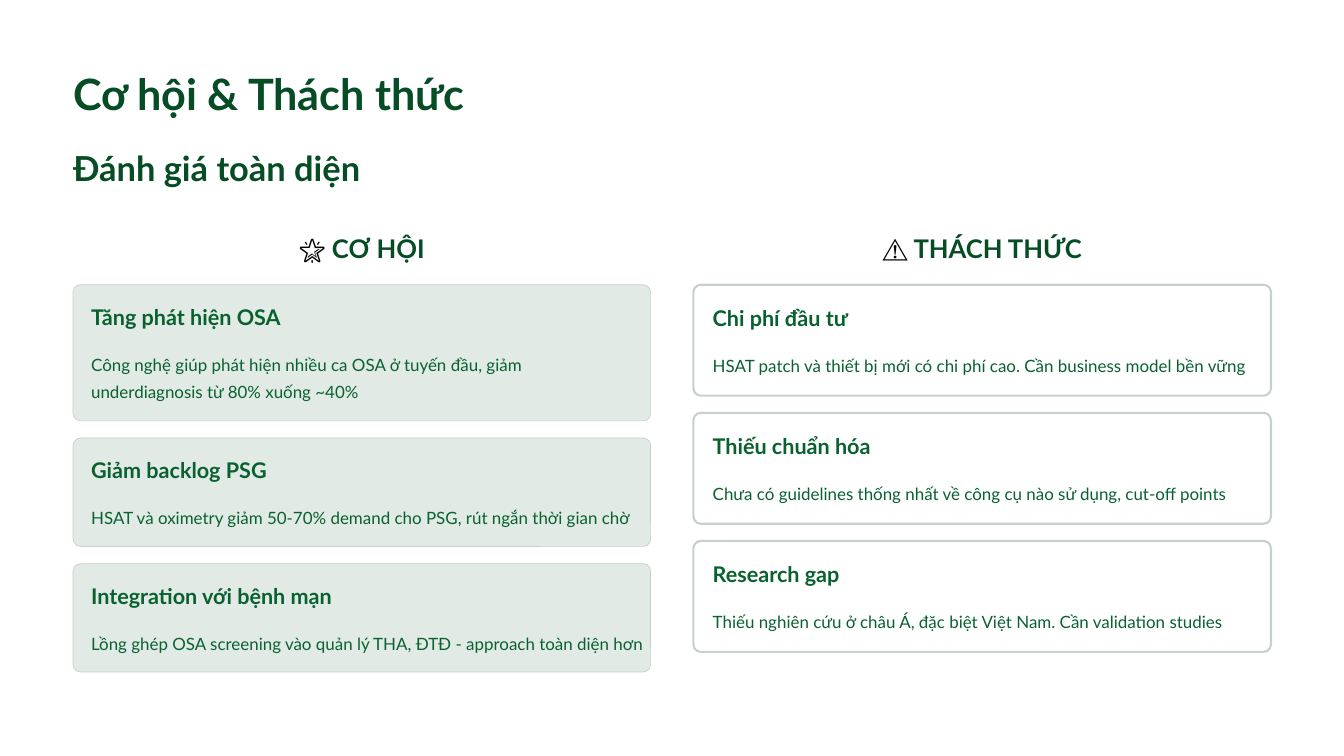
from dataclasses import dataclass

from pptx import Presentation
from pptx.dml.color import RGBColor
from pptx.enum.shapes import MSO_SHAPE
from pptx.enum.text import MSO_ANCHOR, PP_ALIGN
from pptx.slide import Slide
from pptx.util import Inches, Pt

ROUNDED = MSO_SHAPE.ROUNDED_RECTANGLE
TOP = MSO_ANCHOR.TOP
LEFT, CENTER = PP_ALIGN.LEFT, PP_ALIGN.CENTER

FONT = "Lato"
COLORS = {
    "background": "FFFFFF",
    "heading": "064D26",
    "card_text": "096130",
    "icon": "000000",
    "tint": "E1EAE5",
    "border": "C7D0CB",
}

GRID_COLUMNS, GRID_ROWS = 1600, 900
SLIDE_WIDTH, SLIDE_HEIGHT = Inches(16), Inches(9)
MARGIN = 87
GUTTER = 51
COLUMN_WIDTH = (GRID_COLUMNS - 2 * MARGIN - GUTTER) / 2
HEADING_ROW, HEADING_HEIGHT = 276, 39
CARDS_ROW, CARD_GAP, CARD_RADIUS = 339, 20.5, 8.7
TITLE_HEIGHT, TITLE_GAP, LINE_HEIGHT = 32, 21, 33


@dataclass(frozen=True)
class Card:
    title: str
    body: str
    lines: int = 1


@dataclass(frozen=True)
class Side:
    icon: str
    heading: str
    fill: str
    border_width: float
    inset: float
    cards: tuple[Card, ...]


SIDES = (
    Side("🌟", "CƠ HỘI", "tint", 0.6, 21.5, (
        Card("Tăng phát hiện OSA",
             "Công nghệ giúp phát hiện nhiều ca OSA ở tuyến đầu, giảm "
             "underdiagnosis từ 80% xuống ~40%", lines=2),
        Card("Giảm backlog PSG",
             "HSAT và oximetry giảm 50-70% demand cho PSG, rút ngắn thời gian chờ"),
        Card("Integration với bệnh mạn",
             "Lồng ghép OSA screening vào quản lý THA, ĐTĐ - approach toàn diện hơn"),
    )),
    Side("⚠️", "THÁCH THỨC", "background", 1.8, 23, (
        Card("Chi phí đầu tư",
             "HSAT patch và thiết bị mới có chi phí cao. Cần business model bền vững"),
        Card("Thiếu chuẩn hóa",
             "Chưa có guidelines thống nhất về công cụ nào sử dụng, cut-off points"),
        Card("Research gap",
             "Thiếu nghiên cứu ở châu Á, đặc biệt Việt Nam. Cần validation studies"),
    )),
)


def rgb(name: str) -> RGBColor:
    return RGBColor.from_string(COLORS[name])


def place(column: float, row: float, width: float, height: float) -> tuple[int, ...]:
    across, down = SLIDE_WIDTH / GRID_COLUMNS, SLIDE_HEIGHT / GRID_ROWS
    return (round(column * across), round(row * down),
            round(width * across), round(height * down))


def add_text(slide: Slide, text: str, area: tuple[int, ...], *, size: float,
             leading: float, color: str, bold: bool = False, icon: str = "",
             align: PP_ALIGN = LEFT, wrap: bool = False) -> None:
    frame = slide.shapes.add_textbox(*area).text_frame
    frame.margin_left = frame.margin_right = 0
    frame.margin_top = frame.margin_bottom = 0
    frame.word_wrap = wrap
    frame.vertical_anchor = TOP
    paragraph = frame.paragraphs[0]
    paragraph.alignment = align
    paragraph.line_spacing = Pt(leading)
    pieces = [(icon, "icon"), (f" {text}", color)] if icon else [(text, color)]
    for content, shade in pieces:
        run = paragraph.add_run()
        run.text = content
        run.font.name = FONT
        run.font.size = Pt(size)
        run.font.bold = bold
        run.font.color.rgb = rgb(shade)


def add_card(slide: Slide, card: Card, side: Side, column: float, row: float) -> float:
    body_height = card.lines * LINE_HEIGHT
    height = 2 * side.inset + TITLE_HEIGHT + TITLE_GAP + body_height
    panel = slide.shapes.add_shape(ROUNDED, *place(column, row, COLUMN_WIDTH, height))
    panel.adjustments[0] = CARD_RADIUS / height
    panel.shadow.inherit = False
    panel.fill.solid()
    panel.fill.fore_color.rgb = rgb(side.fill)
    panel.line.color.rgb = rgb("border")
    panel.line.width = Pt(side.border_width)

    text_column, title_row = column + side.inset, row + side.inset
    wrapped = card.lines > 1
    line_width = COLUMN_WIDTH - side.inset
    body_width = line_width - side.inset if wrapped else line_width
    add_text(slide, card.title, place(text_column, title_row, line_width, TITLE_HEIGHT),
             size=18.5, leading=23, color="card_text", bold=True)
    body_row = title_row + TITLE_HEIGHT + TITLE_GAP
    add_text(slide, card.body, place(text_column, body_row, body_width, body_height),
             size=14.5, leading=23.5, color="card_text", wrap=wrapped)
    return height


def add_side(slide: Slide, side: Side, column: float) -> None:
    add_text(slide, side.heading,
             place(column, HEADING_ROW, COLUMN_WIDTH, HEADING_HEIGHT),
             size=22, leading=27.5, color="heading", bold=True,
             icon=side.icon, align=CENTER)
    row = CARDS_ROW
    for card in side.cards:
        row += add_card(slide, card, side, column, row) + CARD_GAP


def main() -> None:
    deck = Presentation()
    deck.slide_width, deck.slide_height = SLIDE_WIDTH, SLIDE_HEIGHT
    slide = deck.slides.add_slide(deck.slide_layouts[6])
    slide.background.fill.solid()
    slide.background.fill.fore_color.rgb = rgb("background")

    add_text(slide, "Cơ hội & Thách thức", place(MARGIN, 78, 527, 64),
             size=37, leading=46, color="heading", bold=True)
    add_text(slide, "Đánh giá toàn diện", place(MARGIN, 173, 412, 52),
             size=29.5, leading=37, color="heading", bold=True)
    for index, side in enumerate(SIDES):
        add_side(slide, side, MARGIN + index * (COLUMN_WIDTH + GUTTER))
    deck.save("out.pptx")


if __name__ == "__main__":
    main()
